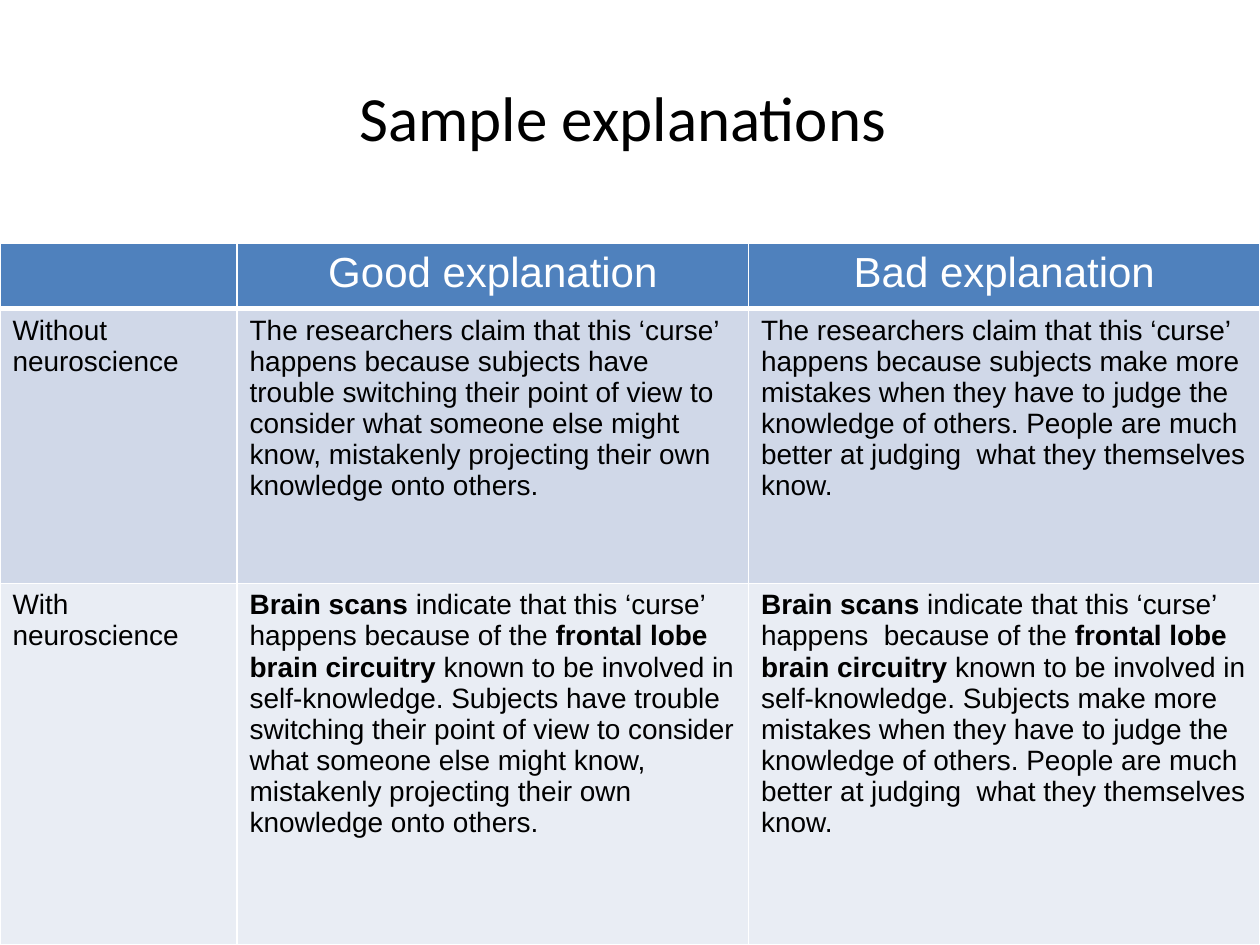
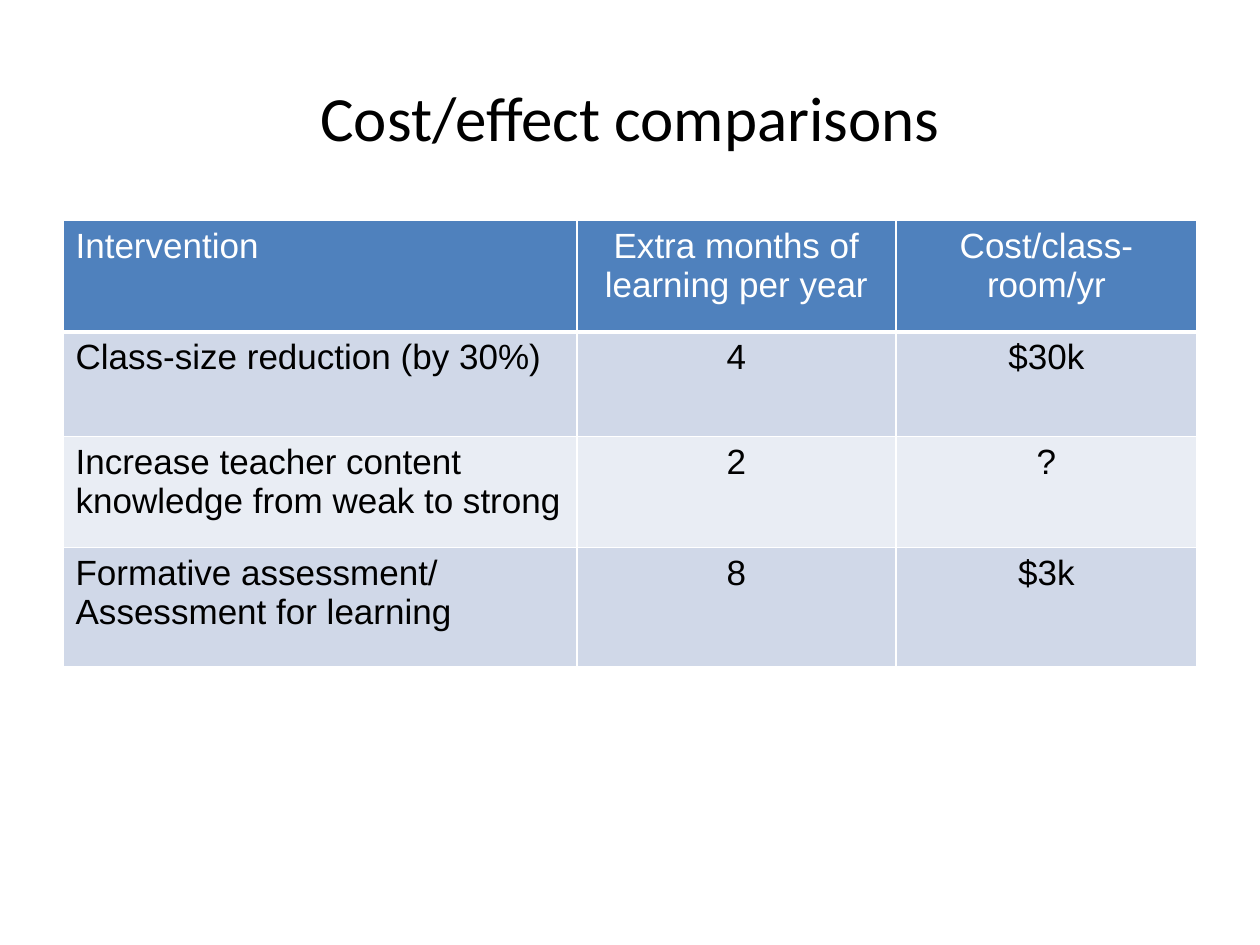
from lxml import etree
from pptx import Presentation
from pptx import util as u
from pptx.dml.color import RGBColor
from pptx.enum import text
from pptx.oxml import ns

COLOURS = {"ink": "000000", "white": "FFFFFF", "header": "4F81BD",
           "band_dark": "D0D8E8", "band_light": "E9EDF4"}
TITLE_FONT, BODY_FONT = "Calibri", "Arial"
LEFT, CENTRE = text.PP_ALIGN.LEFT, text.PP_ALIGN.CENTER


def colour(name):
    return RGBColor.from_string(COLOURS[name])


def write(frame, content, font=BODY_FONT, size=16, ink="ink", align=LEFT):
    """Fill a text frame; a newline starts a paragraph, ** switches bold."""
    for index, line in enumerate(content.split("\n")):
        paragraph = frame.add_paragraph() if index else frame.paragraphs[0]
        paragraph.alignment = align
        for number, part in enumerate(line.split("**")):
            if not part:
                continue
            run = paragraph.add_run()
            run.text = part
            run.font.name = font
            run.font.size = u.Pt(size)
            run.font.bold = number % 2 == 1
            run.font.color.rgb = colour(ink)


class Deck:
    def __init__(self):
        self.presentation = Presentation()
        self.presentation.slide_width = u.Cm(25.4)
        self.presentation.slide_height = u.Cm(19.05)
        self.slide = None

    def add_slide(self, title):
        layout = self.presentation.slide_layouts.get_by_name("Title Only")
        self.slide = self.presentation.slides.add_slide(layout)
        shape = self.slide.shapes.title
        shape.left, shape.top = u.Cm(1.27), u.Cm(0.76)
        shape.width, shape.height = u.Cm(22.86), u.Cm(3.18)
        shape.text_frame.auto_size = text.MSO_AUTO_SIZE.NONE
        shape.text_frame.vertical_anchor = text.MSO_ANCHOR.MIDDLE
        write(shape.text_frame, title, TITLE_FONT, 36, align=CENTRE)

    def add_borders(self, cell, bottom):
        properties = cell._tc.get_or_add_tcPr()
        for side, width in (("L", 1), ("R", 1), ("T", 1), ("B", bottom)):
            line = etree.SubElement(properties, ns.qn(f"a:ln{side}"), w=str(u.Pt(width)))
            fill = etree.SubElement(line, ns.qn("a:solidFill"))
            etree.SubElement(fill, ns.qn("a:srgbClr"), val=COLOURS["white"])

    def add_table(self, left, top, widths, heights, rows,
                  header_size, body_size, header_aligns, body_aligns):
        """Add a table with a blue header and alternating bands; lengths in cm."""
        table = self.slide.shapes.add_table(
            len(rows), len(widths), u.Cm(left), u.Cm(top),
            u.Cm(sum(widths)), u.Cm(sum(heights))).table
        for column, width in zip(table.columns, widths):
            column.width = u.Cm(width)
        for index, (row, height, contents) in enumerate(zip(table.rows, heights, rows)):
            row.height = u.Cm(height)
            header = index == 0
            band = "header" if header else "band_dark" if index % 2 else "band_light"
            aligns = header_aligns if header else body_aligns
            for cell, content, align in zip(row.cells, contents, aligns):
                self.add_borders(cell, bottom=3 if header else 1)
                cell.fill.solid()
                cell.fill.fore_color.rgb = colour(band)
                write(cell.text_frame, content, align=align,
                      size=header_size if header else body_size,
                      ink="white" if header else "ink")


def main():
    deck = Deck()

    # Good and bad explanations, with and without neuroscience
    good = ("ubjects have trouble switching their point of view to consider what "
            "someone else might know, mistakenly projecting their own knowledge onto others.")
    bad = ("ubjects make more mistakes when they have to judge the knowledge of others. "
           "People are much better at judging  what they themselves know.")
    claim = "The researchers claim that this ‘curse’ happens because s"
    scans = "**Brain scans** indicate that this ‘curse’ happens "
    circuitry = ("because of the **frontal lobe brain circuitry** known to be "
                 "involved in self-knowledge. S")
    deck.add_slide("Sample explanations ")
    deck.add_table(
        0, 4.9, [4.78, 10.31, 10.31], [1.32, 5.54, 7.29],
        [["", "Good explanation", "Bad explanation"],
         ["Without neuroscience", claim + good, claim + bad],
         ["With neuroscience", scans + circuitry + good, scans + " " + circuitry + bad]],
        header_size=24, body_size=16,
        header_aligns=[CENTRE] * 3, body_aligns=[LEFT] * 3)

    # Cost and effect of each intervention
    aligns = [LEFT, CENTRE, CENTRE]
    deck.add_slide("Cost/effect comparisons")
    deck.add_table(
        1.27, 4.45, [10.36, 6.43, 6.07], [2.24, 2.11, 2.24, 2.41],
        [["Intervention", "Extra months of learning per year", "Cost/class-room/yr"],
         ["Class-size reduction (by 30%)", "4", "$30k"],
         ["Increase teacher content knowledge from weak to strong", "2", "?"],
         ["Formative assessment/\nAssessment for learning", "8", "$3k"]],
        header_size=20, body_size=20, header_aligns=aligns, body_aligns=aligns)

    deck.presentation.save("out.pptx")


if __name__ == "__main__":
    main()
